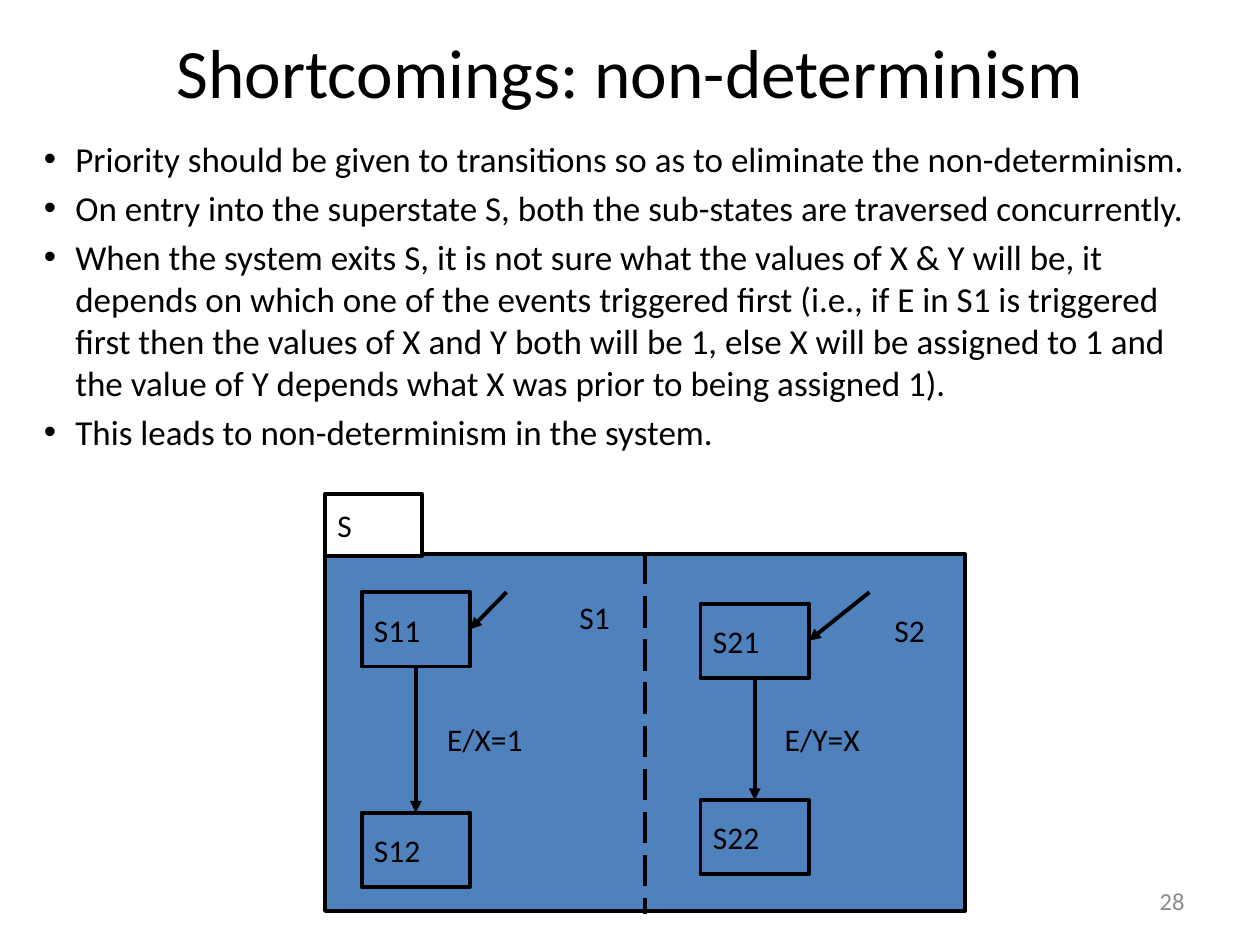
from dataclasses import dataclass

from lxml import etree
from pptx import Presentation
from pptx import util as u
from pptx.dml.color import RGBColor
from pptx.enum import dml, shapes, text
from pptx.oxml import ns

BLACK, BLUE, WHITE, GREY = "000000", "4F81BD", "FFFFFF", "8C8C8C"
FONT = "Calibri"
RIGHT, BOTTOM, TOP = 3, 2, 0

BULLETS = [
    "Priority should be given to transitions so as to eliminate the non-determinism.",
    "On entry into the superstate S, both the sub-states are traversed concurrently.",
    "When the system exits S, it is not sure what the values of X & Y will be, it depends on "
    "which one of the events triggered first (i.e., if E in S1 is triggered first then the values "
    "of X and Y both will be 1, else X will be assigned to 1 and the value of Y depends what X "
    "was prior to being assigned 1).",
    "This leads to non-determinism in the system.",
]


@dataclass
class Box:
    label: str
    left: float
    top: float
    width: float = 0.86
    height: float = 0.59
    fill: str = BLUE
    line: str = BLACK


@dataclass
class Region:
    """One concurrent half of the superstate."""
    start: Box
    end: Box
    entry: tuple[float, float]
    labels: list[Box]


REGIONS = [
    Region(Box("S11", 2.87, 4.7), Box("S12", 2.87, 6.45), (4.02, 4.7),
           [Box("E/X=1", 3.45, 5.57, line=BLUE), Box("S1", 4.5, 4.6, 0.48, line=BLUE)]),
    Region(Box("S21", 5.56, 4.79), Box("S22", 5.56, 6.35), (6.9, 4.7),
           [Box("E/Y=X", 6.13, 5.57, line=BLUE), Box("S2", 7, 4.7, 0.48, line=BLUE)]),
]


def set_color(color_format, value: str) -> None:
    color_format.rgb = RGBColor.from_string(value)


def apply_format(target, values: dict) -> None:
    for name, value in values.items():
        setattr(target, name, value)


def write(paragraph, content: str, size: float, color: str = BLACK) -> None:
    run = paragraph.add_run()
    run.text = content
    apply_format(run.font, {"name": FONT, "size": u.Pt(size)})
    set_color(run.font.color, color)


def add_text(slide, bounds: tuple, lines: list[str], size: float, color: str = BLACK,
             anchor=text.MSO_ANCHOR.MIDDLE, **paragraph_format) -> list:
    """Add a wrapping text box and return its paragraphs."""
    frame = slide.shapes.add_textbox(*map(u.Inches, bounds)).text_frame
    apply_format(frame, {"word_wrap": True, "vertical_anchor": anchor})
    for index, line in enumerate(lines):
        paragraph = frame.add_paragraph() if index else frame.paragraphs[0]
        apply_format(paragraph, paragraph_format)
        write(paragraph, line, size, color)
    return list(frame.paragraphs)


def add_bullet(paragraph) -> None:
    properties = paragraph._p.get_or_add_pPr()
    properties.set("marL", str(u.Inches(0.25)))
    properties.set("indent", str(u.Inches(-0.25)))
    etree.SubElement(properties, ns.qn("a:buFont")).set("typeface", "Arial")
    etree.SubElement(properties, ns.qn("a:buChar")).set("char", "•")


def add_box(slide, box: Box):
    bounds = map(u.Inches, (box.left, box.top, box.width, box.height))
    shape = slide.shapes.add_shape(shapes.MSO_SHAPE.RECTANGLE, *bounds)
    shape.shadow.inherit = False
    shape.fill.solid()
    set_color(shape.fill.fore_color, box.fill)
    set_color(shape.line.color, box.line)
    shape.line.width = u.Pt(2.25)
    if box.label:
        frame = shape.text_frame
        apply_format(frame, {"word_wrap": False, "vertical_anchor": text.MSO_ANCHOR.MIDDLE})
        frame.paragraphs[0].alignment = text.PP_ALIGN.LEFT
        write(frame.paragraphs[0], box.label, 18)
    return shape


def add_line(slide, start: tuple = (0, 0), end: tuple = (0, 0), arrow: bool = True):
    connector = slide.shapes.add_connector(
        shapes.MSO_CONNECTOR.STRAIGHT, *map(u.Inches, (*start, *end)))
    set_color(connector.line.color, BLACK)
    connector.line.width = u.Pt(2.25)
    if arrow:
        line = connector.line._get_or_add_ln()
        etree.SubElement(line, ns.qn("a:tailEnd")).set("type", "triangle")
    else:
        connector.line.dash_style = dml.MSO_LINE.LONG_DASH
    etree.SubElement(connector._element.spPr, ns.qn("a:effectLst"))
    return connector


def add_region(slide, region: Region) -> None:
    start, end = add_box(slide, region.start), add_box(slide, region.end)
    for label in region.labels:
        add_box(slide, label)
    transition = add_line(slide)
    transition.begin_connect(start, BOTTOM)
    transition.end_connect(end, TOP)
    add_line(slide, start=region.entry).end_connect(start, RIGHT)


def main() -> None:
    presentation = Presentation()
    presentation.slide_width, presentation.slide_height = u.Inches(10), u.Inches(7.5)
    slide = presentation.slides.add_slide(presentation.slide_layouts[6])

    add_text(slide, (0.5, 0.3, 9, 0.53), ["Shortcomings: non-determinism"], 39.6,
             alignment=text.PP_ALIGN.CENTER)
    for paragraph in add_text(slide, (0.25, 1.04, 9.46, 2.75), BULLETS, 20,
                              anchor=text.MSO_ANCHOR.TOP, space_before=u.Pt(4)):
        add_bullet(paragraph)
    add_text(slide, (7.17, 6.95, 2.33, 0.4), ["28"], 14, GREY, alignment=text.PP_ALIGN.RIGHT)

    add_box(slide, Box("", 2.58, 4.4, 5.08, 2.83))
    add_line(slide, (5.12, 4.39), (5.12, 7.25), arrow=False)
    for region in REGIONS:
        add_region(slide, region)
    add_box(slide, Box("S", 2.58, 3.92, 0.77, 0.49, fill=WHITE))

    presentation.save("out.pptx")


if __name__ == "__main__":
    main()
